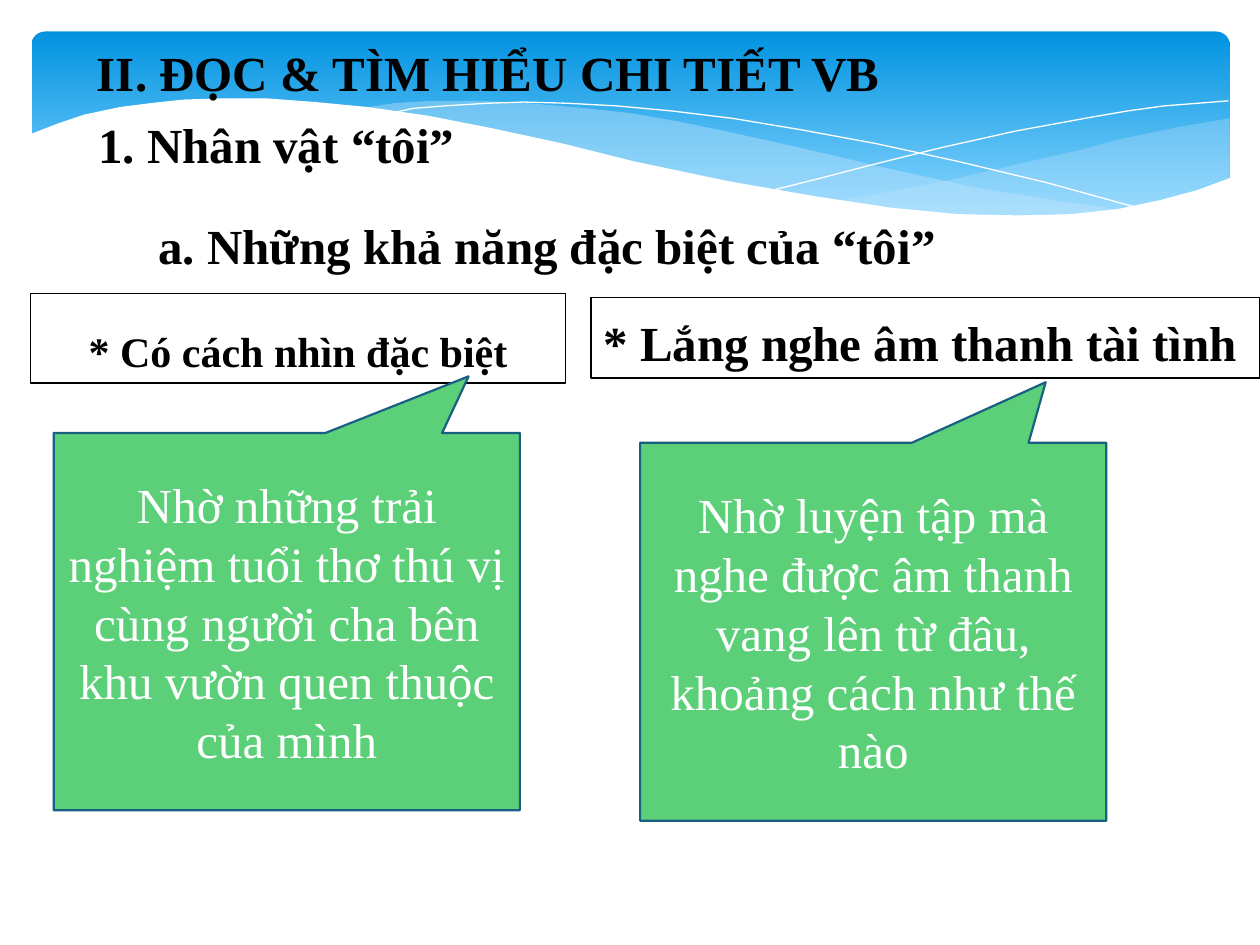
"""Build the lesson slide on the narrator's special abilities."""
from lxml import etree
from pptx import Presentation
from pptx import util as u
from pptx.dml.color import RGBColor
from pptx.enum import shapes, text
from pptx.oxml.ns import qn

COLORS = {"sky": "0293E0", "pale": "83D3FE", "wave": "C6E7FC", "white": "FFFFFF",
          "black": "000000", "green": "5BD078", "edge": "195F84"}
FONT = "Times New Roman"
AL, ANC, MSO = text.PP_ALIGN, text.MSO_ANCHOR, shapes.MSO_SHAPE

RIGHT_WAVE = [(702, 67.7), (673, 72.7), (641.5, 79.2), (620, 85), (579.6, 94.3),
              (542, 103), (508, 109.4), (476, 115.2), (497.5, 118), (527, 121),
              (553.7, 123), (578, 123.8), (601, 123.8), (628, 121.7), (651.6, 117.4),
              (673, 112.3), (693.4, 105.8), (702.7, 101.5), (702.7, 67.7)]
LONG_WAVE = [(643, 120.2), (602.6, 114.5), (558, 107.3), (508.3, 96.5), (452.9, 83.5),
             (420.5, 76.3), (389.5, 69.8), (361.4, 64.8), (334.8, 61.9), (302.4, 59),
             (273.6, 57.6), (247.7, 57.6), (225.4, 59), (205.9, 61.9), (232.6, 64.8),
             (260.6, 69.8), (290.9, 76.3), (323.3, 83.5), (353.5, 90.7), (381.6, 97.2),
             (420.5, 105.1), (456.5, 112.3), (489.6, 117.4), (519.8, 121),
             (547.9, 123.1), (573, 124.6), (596.2, 124.6), (617, 123.1)]
FALLING_LINE = [(222.5, 64.8), (236.2, 61.9), (254.2, 60.5), (278.6, 59), (299.5, 58.3),
                (324, 59), (352, 60.5), (383.8, 63.4), (419, 67.7), (457.9, 74.2),
                (500.4, 82), (547.2, 92.2), (598.3, 104.4), (653, 119.5)]
RISING_LINE = [(441.4, 108.7), (470.2, 101.5), (500.4, 93.6), (538.6, 84.2),
               (580.3, 74.9), (623.5, 67), (644.4, 63.4), (665.3, 60.5), (684.7, 59),
               (702, 57.6)]
WHITE_WAVE = [(703.4, 101.5), (684, 108.7), (662.4, 114.5), (638.6, 119.5), (612, 122.4),
              (582.5, 123.1), (547.9, 122.4), (509.8, 118.8), (466.6, 112.3),
              (416.9, 103.7), (362.2, 92.2), (321.8, 82.1), (281.5, 73.4), (244.8, 66.2),
              (210.2, 61.2), (180, 58.3), (151.9, 56.2), (127.4, 56.2), (105, 56.9),
              (85.7, 59), (68.4, 61.2), (48.2, 65.5), (33, 70.6), (16.6, 77),
              (16.6, 161.3), (703.4, 161.3)]
WAVES = [(RIGHT_WAVE, "wave", 29), (LONG_WAVE, "wave", 40), (FALLING_LINE, None, 100),
         (RISING_LINE, None, 100), (WHITE_WAVE, "white", 100)]

TITLE = ("II. ĐỌC & TÌM HIỂU CHI TIẾT VB", (48.2, 20.9, 465.1, 41))
HEADINGS = [
    ("1. Nhân vật “tôi”", (49, 61.9, 436.3, 41), 7.2, 1),
    ("a. Những khả năng đặc biệt của “tôi”", (76.3, 103, 504.7, 58.3), 14.2, 1.5),
]
LABELS = [
    ("* Lắng nghe âm thanh tài tình", (337.7, 169.9, 382.3, 46.1), 28, AL.JUSTIFY, 1.15),
    ("* Có cách nhìn đặc biệt", (17.3, 167.8, 306, 51.1), 24, AL.CENTER, 1.5),
]
CALLOUTS = [
    ("Nhờ những trải nghiệm tuổi thơ thú vị cùng người cha bên khu vườn quen thuộc "
     "của mình", (30.7, 247.4, 266.4, 215.6), (0.39, -0.65)),
    ("Nhờ luyện tập mà nghe được âm thanh vang lên từ đâu, khoảng cách như thế nào",
     (365.8, 253, 266.4, 216), (0.37, -0.66)),
]


def rgb(name):
    return RGBColor.from_string(COLORS[name])


def pts(values):
    return [u.Pt(v) for v in values]


def paint(sp, fill=None, line=None, width=0):
    sp.shadow.inherit = False
    if fill:
        sp.fill.solid()
        sp.fill.fore_color.rgb = rgb(fill)
    else:
        sp.fill.background()
    if line:
        sp.line.color.rgb = rgb(line)
        sp.line.width = u.Pt(width)
    else:
        sp.line.fill.background()


def write(sp, words, size=28, color="black", bold=True, align=AL.LEFT, spacing=1,
          anchor=ANC.TOP, left=7.2):
    tf = sp.text_frame
    frame = {"word_wrap": True, "auto_size": text.MSO_AUTO_SIZE.NONE,
             "vertical_anchor": anchor, "margin_left": u.Pt(left),
             "margin_right": u.Pt(7.2), "margin_top": u.Pt(3.6),
             "margin_bottom": u.Pt(3.6)}
    p = tf.paragraphs[0]
    para = {"alignment": align, "line_spacing": spacing, "space_before": u.Pt(0)}
    r = p.add_run()
    r.text = words
    font = {"name": FONT, "size": u.Pt(size), "bold": bold}
    for obj, values in ((tf, frame), (p, para), (r.font, font)):
        for key, value in values.items():
            setattr(obj, key, value)
    r.font.color.rgb = rgb(color)


def draw_banner(s):
    sp = s.shapes.add_shape(MSO.ROUNDED_RECTANGLE, *pts((18, 18, 684.7, 112.3)))
    sp.adjustments[0] = 0.07
    paint(sp)
    sp.fill.gradient()
    sp.fill.gradient_angle = 270
    for stop, name, pos in zip(sp.fill.gradient_stops, ("sky", "pale"), (0, 0.9)):
        stop.color.rgb = rgb(name)
        stop.position = pos
    for points, fill, alpha in WAVES:
        start, *rest = [pts(point) for point in points]
        builder = s.shapes.build_freeform(*start)
        builder.add_line_segments(rest, close=bool(fill))
        sp = builder.convert_to_shape()
        paint(sp, fill, None if fill else "white")
        if alpha < 100:
            color = sp.element.spPr.find(qn("a:solidFill"))[0]
            etree.SubElement(color, qn("a:alpha")).set("val", str(alpha * 1000))


def main():
    prs = Presentation()
    prs.slide_width, prs.slide_height = pts((720, 540))
    s = prs.slides.add_slide(prs.slide_layouts[5])
    draw_banner(s)

    words, box = TITLE
    title = s.shapes.title
    title.left, title.top, title.width, title.height = pts(box)
    write(title, words)
    s.shapes.element.append(title.element)

    for words, box, left, spacing in HEADINGS:
        write(s.shapes.add_textbox(*pts(box)), words, left=left, spacing=spacing)

    for words, box, size, align, spacing in LABELS:
        sp = s.shapes.add_shape(MSO.RECTANGLE, *pts(box))
        paint(sp, line="black", width=0.75)
        write(sp, words, size, align=align, spacing=spacing)

    for words, box, tip in CALLOUTS:
        sp = s.shapes.add_shape(MSO.RECTANGULAR_CALLOUT, *pts(box))
        sp.adjustments[0], sp.adjustments[1] = tip
        paint(sp, "green", "edge", 1.25)
        write(sp, words, color="white", bold=False, align=AL.CENTER, anchor=ANC.MIDDLE)

    prs.save("out.pptx")


if __name__ == "__main__":
    main()
